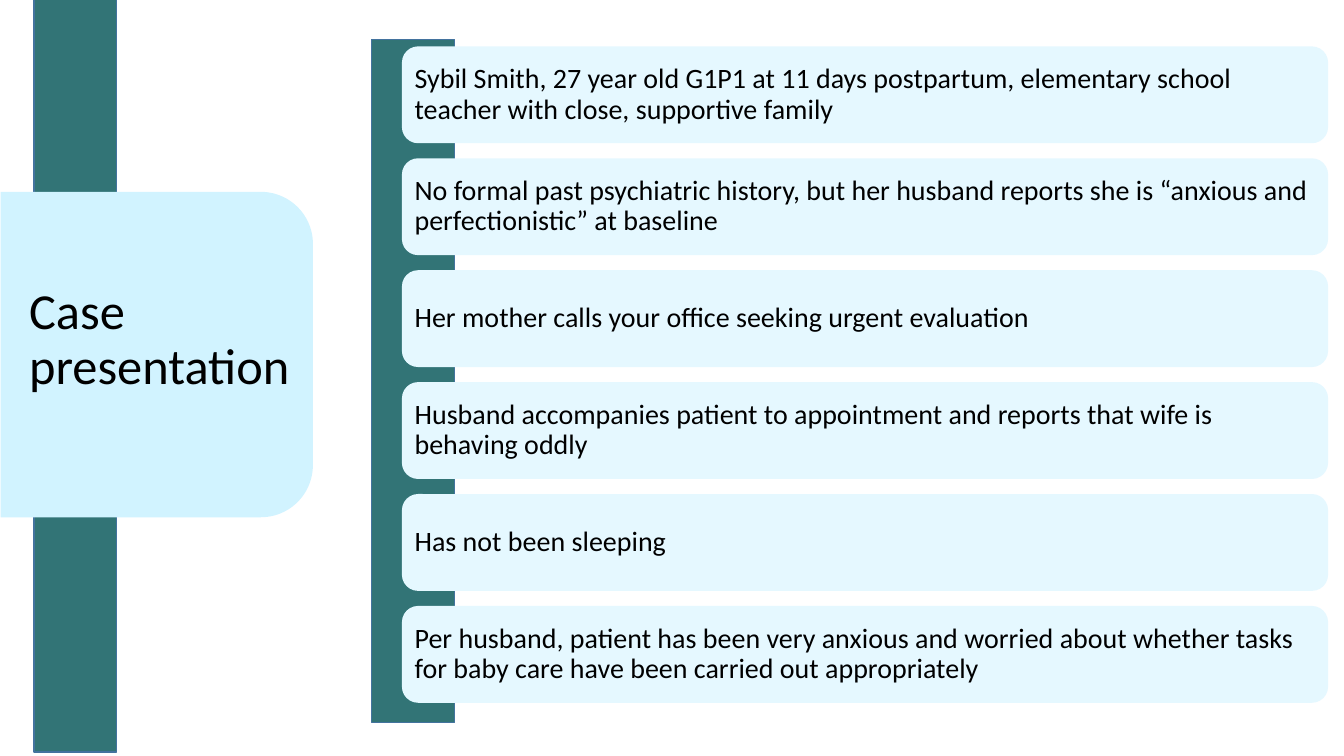
from dataclasses import dataclass

from pptx import Presentation
from pptx import util as u
from pptx.dml.color import RGBColor
from pptx.enum import shapes, text

TEAL = RGBColor(0x32, 0x74, 0x76)
BAR_EDGE = RGBColor(0x43, 0x73, 0x9E)
SKY = RGBColor(0xD1, 0xF3, 0xFF)
PALE_SKY = RGBColor(0xE5, 0xF8, 0xFF)
BLACK = RGBColor(0, 0, 0)

FINDINGS = (
    "Sybil Smith, 27 year old G1P1 at 11 days postpartum, elementary school teacher with close, supportive family",
    "No formal past psychiatric history, but her husband reports she is “anxious and perfectionistic” at baseline",
    "Her mother calls your office seeking urgent evaluation",
    "Husband accompanies patient to appointment and reports that wife is behaving oddly",
    "Has not been sleeping",
    "Per husband, patient has been very anxious and worried about whether tasks for baby care have been carried out appropriately",
)
CARD_TOP = 1.17
CARD_PITCH = 2.82
CARD_INSET = u.Cm(0.2)

FRAME_FORMAT = {
    "word_wrap": True,
    "auto_size": text.MSO_AUTO_SIZE.NONE,
    "vertical_anchor": text.MSO_ANCHOR.MIDDLE,
}
CARD_FRAME_FORMAT = FRAME_FORMAT | {
    f"margin_{side}": CARD_INSET for side in ("left", "top", "right", "bottom")
}
PARAGRAPH_FORMAT = {"alignment": text.PP_ALIGN.LEFT, "line_spacing": 0.9}


@dataclass(frozen=True)
class Panel:
    left: float
    top: float
    width: float
    height: float
    fill: RGBColor
    kind: shapes.MSO_SHAPE = shapes.MSO_SHAPE.RECTANGLE
    edge: RGBColor | None = None
    rotation: float = 0
    wording: str = ""


def apply_format(target, values: dict) -> None:
    for name, value in values.items():
        setattr(target, name, value)


def write_text(frame, wording: str, size: int, frame_format: dict) -> None:
    apply_format(frame, frame_format)
    paragraph = frame.paragraphs[0]
    paragraph.text = wording
    apply_format(paragraph, PARAGRAPH_FORMAT)
    for run in paragraph.runs:
        apply_format(run.font, {"name": "Calibri", "size": u.Pt(size)})
        run.font.color.rgb = BLACK


def draw_panel(slide, panel: Panel) -> None:
    body = slide.shapes.add_shape(
        panel.kind, u.Cm(panel.left), u.Cm(panel.top), u.Cm(panel.width), u.Cm(panel.height)
    )
    body.shadow.inherit = False
    body.rotation = panel.rotation
    body.fill.solid()
    body.fill.fore_color.rgb = panel.fill
    if panel.edge is None:
        body.line.fill.background()
    else:
        body.line.color.rgb = panel.edge
        body.line.width = u.Pt(1)
    if panel.wording:
        write_text(body.text_frame, panel.wording, 20, CARD_FRAME_FORMAT)


def main() -> None:
    deck = Presentation()
    apply_format(deck, {"slide_width": u.Cm(33.87), "slide_height": u.Cm(19.05)})
    case_slide = deck.slides.add_slide(deck.slide_layouts.get_by_name("Title Only"))

    backdrop = [
        Panel(9.37, 0.99, 2.08, 17.22, TEAL, edge=BAR_EDGE),
        Panel(0.86, -0.05, 2.08, 19, TEAL, edge=BAR_EDGE),
        Panel(-0.15, 5, 8.2, 7.87, SKY, shapes.MSO_SHAPE.ROUND_2_SAME_RECTANGLE, rotation=90),
    ]
    cards = [
        Panel(10.13, CARD_TOP + row * CARD_PITCH, 23.34, 2.44, PALE_SKY,
              shapes.MSO_SHAPE.ROUNDED_RECTANGLE, wording=finding)
        for row, finding in enumerate(FINDINGS)
    ]
    for panel in backdrop + cards:
        draw_panel(case_slide, panel)

    heading = case_slide.shapes.title
    apply_format(heading, {
        "left": u.Cm(0.48), "top": u.Cm(3.89), "width": u.Cm(12.01), "height": u.Cm(9.4),
    })
    write_text(heading.text_frame, "Case \vpresentation", 36, FRAME_FORMAT)
    heading.element.getparent().append(heading.element)

    deck.save("out.pptx")


if __name__ == "__main__":
    main()
